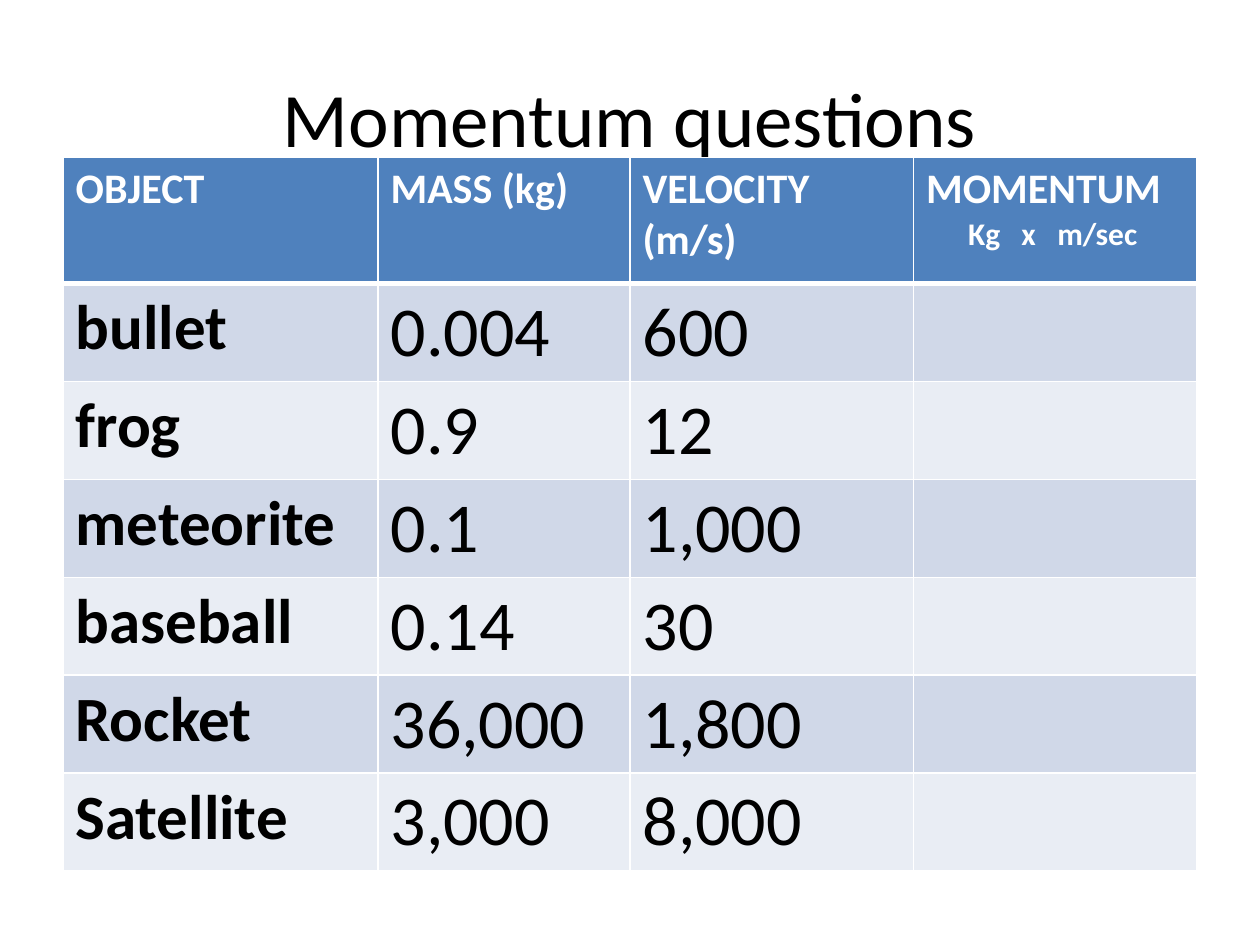
from lxml.etree import SubElement
from pptx import Presentation
from pptx.dml.color import RGBColor as Rgb
from pptx.enum.text import MSO_ANCHOR as Anchor, PP_ALIGN as Align
from pptx.oxml.ns import qn
from pptx.util import Pt

COLORS = {
    "ink": "000000",
    "paper": "FFFFFF",
    "header": "4F81BD",
    "odd": "D0D8E8",
    "even": "E9EDF4",
}
HEADINGS = ["OBJECT", "MASS (kg)", "VELOCITY (m/s)", "MOMENTUM"]
OBJECTS = [
    ("bullet", "0.004", "600"),
    ("frog", "0.9", "12"),
    ("meteorite", "0.1", "1,000"),
    ("baseball", "0.14", "30"),
    ("Rocket", "36,000", "1,800"),
    ("Satellite", "3,000", "8,000"),
]


class SlideBuilder:
    font = "Calibri"

    def __init__(self, page):
        self.page = page

    def add_span(self, para, text, size, color="ink", bold=False):
        span = para.add_run()
        span.text = text
        span.font.name = self.font
        span.font.size = Pt(size)
        span.font.bold = bold
        span.font.color.rgb = Rgb.from_string(COLORS[color])

    def add_title(self, text, left, top, width, height):
        box = self.page.shapes.title
        box.left, box.top, box.width, box.height = map(Pt, (left, top, width, height))
        box.text_frame.vertical_anchor = Anchor.MIDDLE
        para = box.text_frame.paragraphs[0]
        para.alignment = Align.CENTER
        self.add_span(para, text, 44)

    def add_table(self, left, top, widths, heights):
        frame = self.page.shapes.add_table(
            len(heights), len(widths), Pt(left), Pt(top), Pt(sum(widths)), Pt(sum(heights)))
        table = frame.table
        for column, width in zip(table.columns, widths):
            column.width = Pt(width)
        for row, height in zip(table.rows, heights):
            row.height = Pt(height)
        return table

    def style_cell(self, cell, fill, top=1, bottom=1):
        # Borders come before the fill in the cell properties
        properties = cell._tc.get_or_add_tcPr()
        for side, weight in (("L", 1), ("R", 1), ("T", top), ("B", bottom)):
            line = SubElement(properties, qn(f"a:ln{side}"), w=str(Pt(weight)))
            solid = SubElement(line, qn("a:solidFill"))
            SubElement(solid, qn("a:srgbClr"), val=COLORS["paper"])
        cell.fill.solid()
        cell.fill.fore_color.rgb = Rgb.from_string(COLORS[fill])

    def set_tabs(self, para, stops):
        tabs = SubElement(para._p.get_or_add_pPr(), qn("a:tabLst"))
        for stop in stops:
            SubElement(tabs, qn("a:tab"), pos=str(Pt(stop)), algn="l")


def main():
    deck = Presentation()
    deck.slide_width, deck.slide_height = Pt(720), Pt(540)
    builder = SlideBuilder(deck.slides.add_slide(deck.slide_layouts[5]))

    # Title
    builder.add_title("Momentum questions", 36, 21.6, 648, 90)

    # Table header
    table = builder.add_table(36, 90, [180, 144, 162, 162], [72] + [55.9] * len(OBJECTS))
    for column, heading in enumerate(HEADINGS):
        cell = table.cell(0, column)
        builder.style_cell(cell, "header", bottom=3)
        builder.add_span(cell.text_frame.paragraphs[0], heading, 24, "paper", True)

    # Unit under the last heading, spaced with tab stops
    units = table.cell(0, 3).text_frame.add_paragraph()
    builder.set_tabs(units, [24, 54.5, 75])
    builder.add_span(units, "\tKg\tx\tm/sec", 18, "paper", True)

    # Objects, with the momentum column left open
    for row, values in enumerate(OBJECTS, start=1):
        for column in range(len(HEADINGS)):
            cell = table.cell(row, column)
            builder.style_cell(cell, "odd" if row % 2 else "even", top=3 if row == 1 else 1)
            if column < len(values):
                is_name = column == 0
                builder.add_span(cell.text_frame.paragraphs[0], values[column],
                                 36 if is_name else 40, bold=is_name)

    deck.save("out.pptx")


if __name__ == "__main__":
    main()
